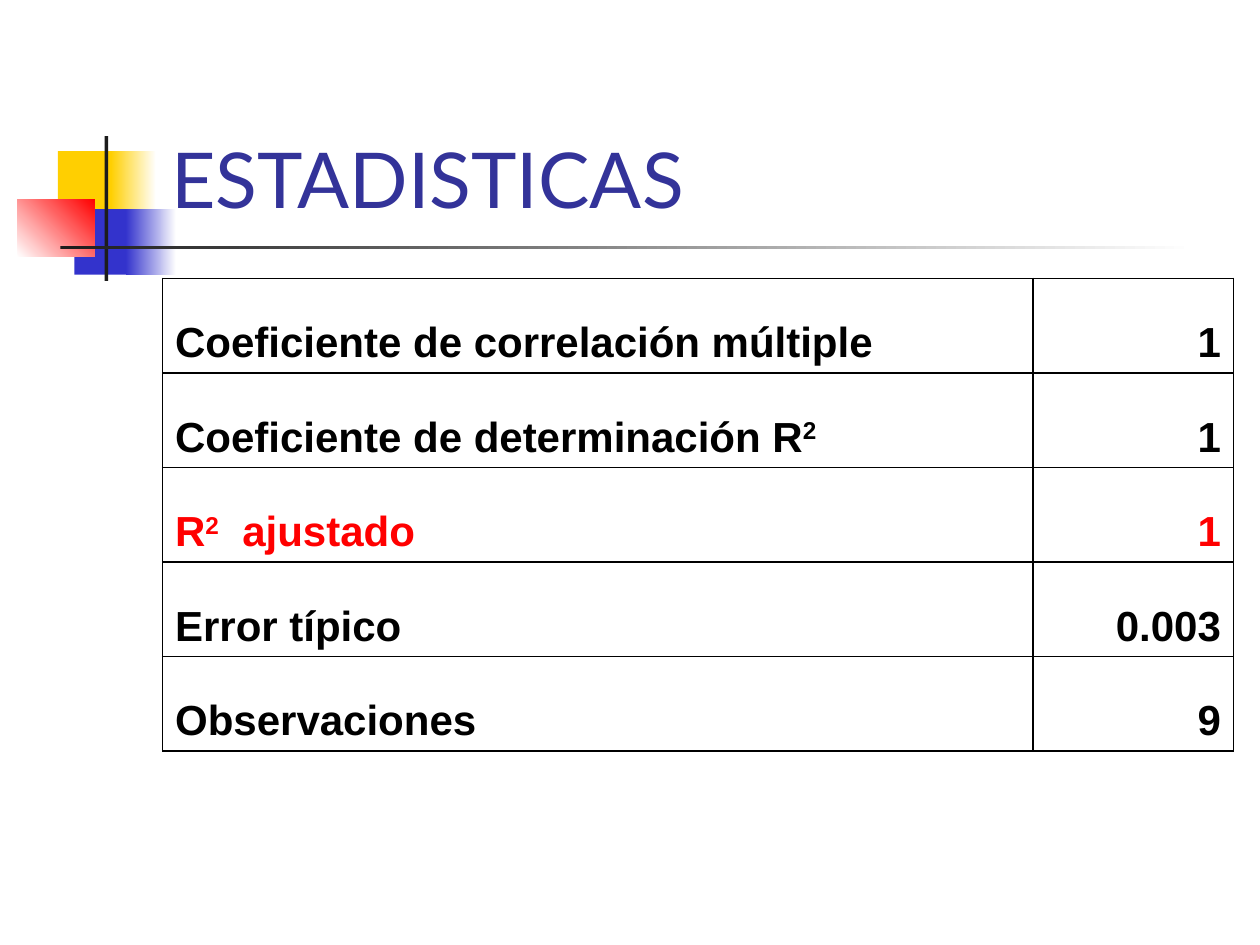
from lxml.etree import SubElement
from pptx import Presentation
from pptx.dml.color import RGBColor
from pptx.enum.shapes import MSO_SHAPE
from pptx.enum.text import MSO_ANCHOR, MSO_AUTO_SIZE, PP_ALIGN
from pptx.oxml.ns import qn
from pptx.util import Inches, Pt

HUES = {"gold": "FFCF01", "blue": "3333CC", "red": "FF0000", "dark": "1C1C1C",
        "white": "FFFFFF", "black": "000000", "title": "333399"}
UNIT = 0.1  # inches per grid column and row


def grid(*cells):
    return [Inches(n * UNIT) for n in cells]


def tint(name):
    return RGBColor.from_string(HUES[name])


def write(frame, text, font="Arial", size=24, hue="black", bold=False,
          align=PP_ALIGN.LEFT):
    """Fill a text frame; a ^ switches superscript on and off."""
    para = frame.paragraphs[0]
    para.alignment = align
    for i, part in enumerate(text.split("^")):
        if not part:
            continue
        run = para.add_run()
        run.text = part
        run.font.name, run.font.size, run.font.bold = font, Pt(size), bold
        run.font.color.rgb = tint(hue)
        if i % 2:
            run.font._element.set("baseline", "30000")


class Deck:
    def __init__(self):
        self.file = Presentation()
        self.file.slide_width, self.file.slide_height = grid(100, 75)
        self.slide = self.file.slides.add_slide(self.file.slide_layouts[5])

    def title(self, text, box):
        head = self.slide.shapes.title
        head.left, head.top, head.width, head.height = grid(*box)
        frame = head.text_frame
        frame.auto_size = MSO_AUTO_SIZE.NONE
        frame.vertical_anchor = MSO_ANCHOR.BOTTOM
        write(frame, text, font="Lato", size=44, hue="title")

    def block(self, box, hue, end=None, angle=0):
        """Draw a plain rectangle, or one that fades from hue to end."""
        shape = self.slide.shapes.add_shape(MSO_SHAPE.RECTANGLE, *grid(*box))
        shape.shadow.inherit = False
        shape.line.fill.background()
        if end is None:
            shape.fill.solid()
            shape.fill.fore_color.rgb = tint(hue)
            return
        shape.fill.gradient()
        shape.fill.gradient_angle = angle
        for stop, name in zip(shape.fill.gradient_stops, (hue, end)):
            stop.color.rgb = tint(name)

    def edge(self, cell):
        props = cell._tc.get_or_add_tcPr()
        for i, side in enumerate(("a:lnL", "a:lnR", "a:lnT", "a:lnB")):
            line = props.makeelement(qn(side), {"w": str(Pt(1))})
            fill = SubElement(line, qn("a:solidFill"))
            SubElement(fill, qn("a:srgbClr"), val=HUES["black"])
            props.insert(i, line)

    def table(self, rows, spot, wide, tall):
        size = (sum(wide), tall * len(rows))
        table = self.slide.shapes.add_table(
            len(rows), len(wide), *grid(*spot, *size)).table
        table.first_row = table.horz_banding = False
        for col, width in zip(table.columns, grid(*wide)):
            col.width = width
        for r, (label, value, hue) in enumerate(rows):
            pairs = ((label, PP_ALIGN.LEFT), (value, PP_ALIGN.RIGHT))
            for c, (text, align) in enumerate(pairs):
                cell = table.cell(r, c)
                cell.fill.background()
                cell.vertical_anchor = MSO_ANCHOR.BOTTOM
                self.edge(cell)
                write(cell.text_frame, text, hue=hue, bold=True, align=align)


def main():
    deck = Deck()
    deck.block((4.6, 12, 4.8, 5.2), "gold")
    deck.block((8.8, 12, 3.6, 5.2), "gold", "white")
    deck.block((5.9, 16.6, 4.6, 5.2), "blue")
    deck.block((10, 16.6, 4, 5.2), "blue", "white")
    deck.block((1.4, 15.8, 6.1, 4.6), "white", "red", angle=45)
    deck.block((8.3, 10.8, 0.3, 11.5), "dark")
    deck.block((4.8, 19.5, 90, 0.3), "dark", "white")
    deck.title("ESTADISTICAS", (12.6, 2.3, 85.2, 16))
    deck.table([
        ("Coeficiente de correlación múltiple", "1", "black"),
        ("Coeficiente de determinación R^2^", "1", "black"),
        ("R^2^  ajustado", "1", "red"),
        ("Error típico", "0.003", "black"),
        ("Observaciones", "9", "black"),
    ], spot=(12.9, 22.1), wide=(69.1, 15.9), tall=7.5)
    deck.file.save("out.pptx")


if __name__ == "__main__":
    main()
